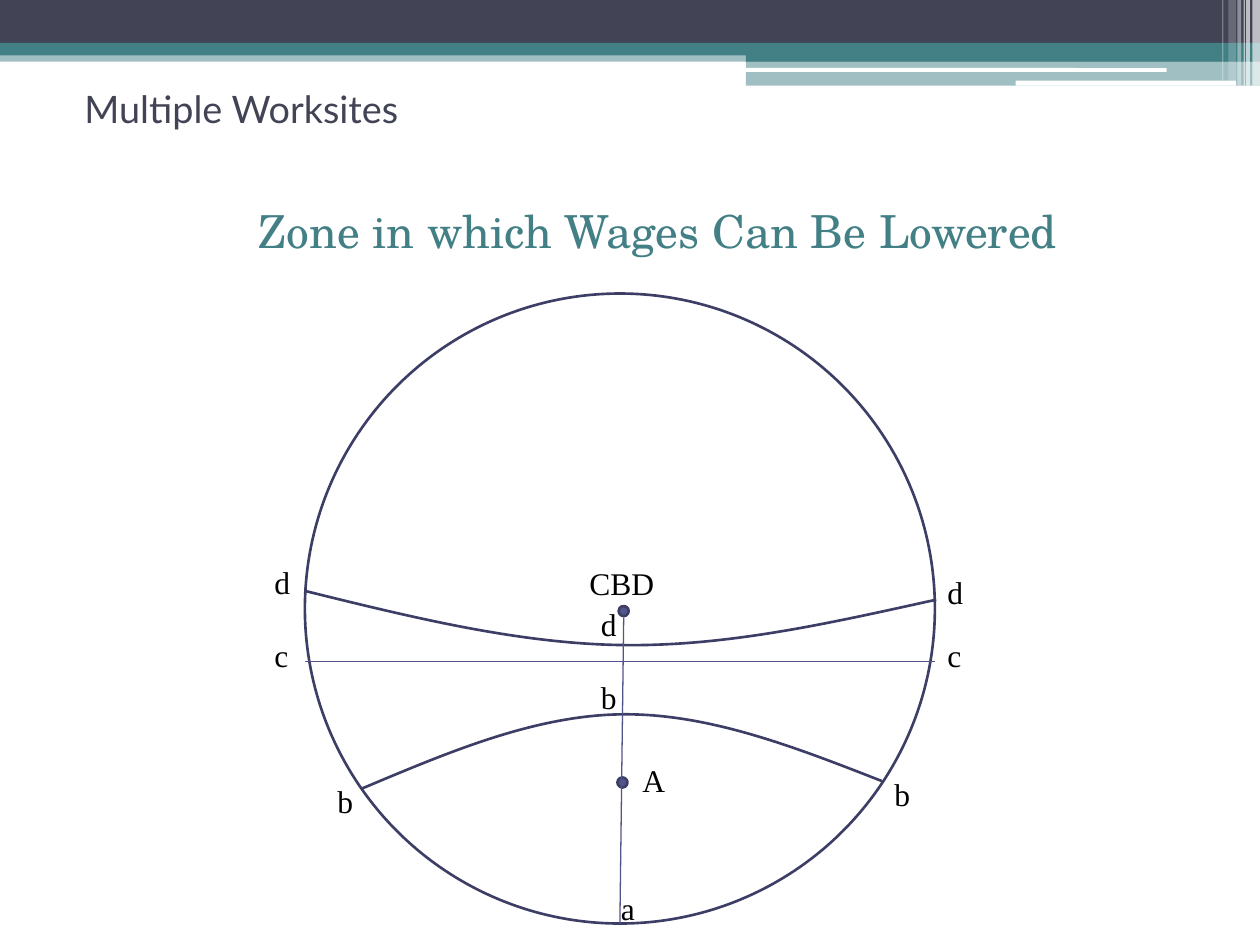
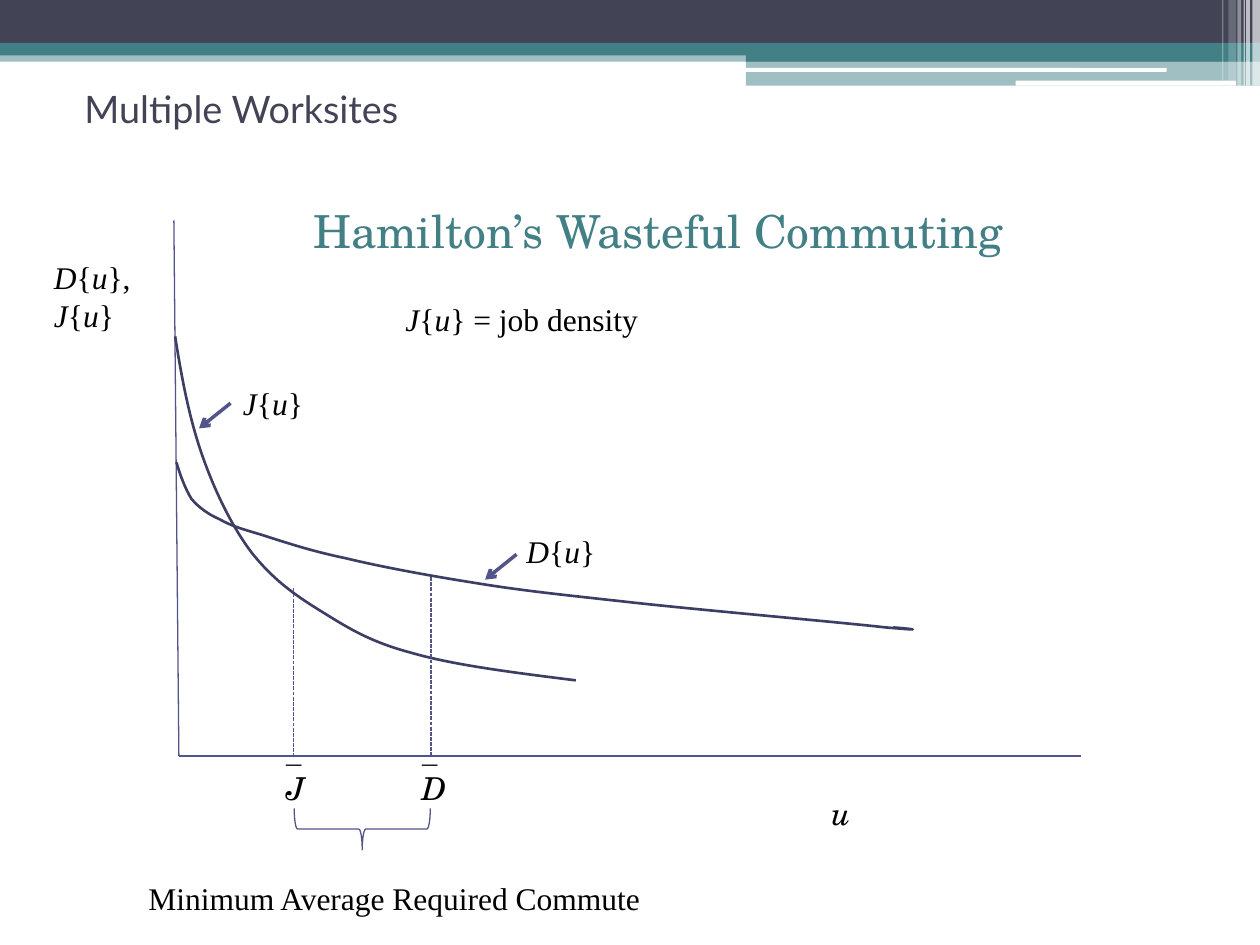
from lxml.etree import SubElement as Sub
from pptx import Presentation
from pptx.dml.color import RGBColor
from pptx.enum.dml import MSO_LINE as Dash
from pptx.enum.shapes import MSO_CONNECTOR as Link, MSO_SHAPE as Kind
from pptx.enum.text import MSO_ANCHOR as Anchor, MSO_AUTO_SIZE as Fit, PP_ALIGN as Align
from pptx.oxml.ns import qn
from pptx.util import Inches, Pt

NAVY, TEAL, WHITE, BLACK = "424456", "438086", "FFFFFF", "000000"
VIOLET, EDGE = "53548A", "3D3E66"
SANS, SCHOOL, TIMES = "Lato", "TeX Gyre Schola", "Times New Roman"


def tint(code):
    return RGBColor.from_string(code)


def span(*sizes):
    return [Inches(size) for size in sizes]


class Deck:
    def __init__(self):
        self.show = Presentation()
        self.show.slide_width, self.show.slide_height = span(10, 7.5)
        self.slide = None

    def page(self, title, head):
        self.slide = self.show.slides.add_slide(self.show.slide_layouts[1])
        name, body = self.slide.placeholders
        self.place(name, (0.5, 0.75, 9, 0.58))
        frame = name.text_frame
        frame.text = title
        frame.auto_size = Fit.NONE
        frame.vertical_anchor = Anchor.MIDDLE
        frame.margin_left, frame.margin_top, frame.margin_bottom = span(0.17, 0, 0.36)
        frame.paragraphs[0].alignment = Align.LEFT
        self.font(frame.paragraphs[0].runs[0], SANS, 21.6, NAVY)

        self.place(body, (0.5, 1.56, 9, 5.86))
        frame = body.text_frame
        frame.text = head
        frame.auto_size = Fit.NONE
        para = frame.paragraphs[0]
        para.level = 1
        para.alignment = Align.CENTER
        para.space_before = Pt(3)
        props = para._p.get_or_add_pPr()
        props.set("marL", str(Inches(0.45)))
        props.set("indent", "0")
        Sub(props, qn("a:buNone"))
        self.font(para.runs[0], SCHOOL, 26, TEAL)

    def place(self, shape, at):
        shape.left, shape.top, shape.width, shape.height = span(*at)

    def font(self, run, face, size, hue):
        run.font.name = face
        run.font.size = Pt(size)
        run.font.color.rgb = tint(hue)

    def stroke(self, line, hue, width):
        line.color.rgb = tint(hue)
        line.width = Pt(width)

    def shape(self, kind, at, fill=None, edge=None, width=1.5, alpha=100):
        shape = self.slide.shapes.add_shape(kind, *span(*at))
        shape.shadow.inherit = False
        if fill:
            shape.fill.solid()
            shape.fill.fore_color.rgb = tint(fill)
            if alpha < 100:
                hue = next(shape.element.spPr.iter(qn("a:srgbClr")))
                Sub(hue, qn("a:alpha"), val=str(alpha * 1000))
        else:
            shape.fill.background()
        if edge:
            self.stroke(shape.line, edge, width)
        else:
            shape.line.fill.background()
        return shape

    def bands(self, rows):
        tree = self.show.slide_master.shapes.element
        for mark, (kind, at, fill, alpha) in enumerate(rows, 20):
            band = self.shape(kind, at, fill, alpha=alpha).element
            band.nvSpPr.cNvPr.set("id", str(mark))
            tree.append(band)

    def line(self, start, end, width=0.75, dash=None, arrow=False):
        line = self.slide.shapes.add_connector(Link.STRAIGHT, *span(*start, *end))
        self.stroke(line.line, VIOLET, width)
        if dash:
            line.line.dash_style = dash
        props = line.element.spPr
        if arrow:
            Sub(props.get_or_add_ln(), qn("a:tailEnd"), type="arrow")
        Sub(props, qn("a:effectLst"))

    def curve(self, start, *points):
        pen = self.slide.shapes.build_freeform(*span(*start))
        pen.add_line_segments([span(*point) for point in points], close=False)
        shape = pen.convert_to_shape()
        steps = list(shape.element.iter(qn("a:lnTo")))
        for one, two, three in zip(steps[::3], steps[1::3], steps[2::3]):
            one.tag = qn("a:cubicBezTo")
            for step in (two, three):
                one.append(step[0])
                step.getparent().remove(step)
        shape.shadow.inherit = False
        shape.fill.background()
        self.stroke(shape.line, EDGE, 1.5)

    def label(self, at, *rows, face=TIMES):
        frame = self.slide.shapes.add_textbox(*span(*at)).text_frame
        frame.word_wrap = True
        frame.auto_size = Fit.SHAPE_TO_FIT_TEXT
        for spot, row in enumerate(rows):
            para = frame.add_paragraph() if spot else frame.paragraphs[0]
            for turn, part in enumerate(row.split("*")):
                if part:
                    run = para.add_run()
                    run.text = part
                    run.font.italic = turn % 2 == 1
                    self.font(run, face, 18, BLACK)


def frame_bands(deck):
    rows = [
        (Kind.RECTANGLE, (0, 0.4, 10, 0.09), TEAL, 50),
        (Kind.RECTANGLE, (0, 0, 10, 0.34), NAVY, 100),
        (Kind.RECTANGLE, (0, 0.34, 10, 0.1), TEAL, 100),
        (Kind.RECTANGLE, (5.92, 0.39, 4.08, 0.1), TEAL, 100),
        (Kind.RECTANGLE, (5.92, 0.48, 4.08, 0.2), TEAL, 50),
        (Kind.ROUNDED_RECTANGLE, (5.91, 0.54, 3.35, 0.03), WHITE, 100),
        (Kind.ROUNDED_RECTANGLE, (8.06, 0.64, 1.75, 0.04), WHITE, 100),
    ]
    stripes = [
        (9.94, 0.06, 0.68, 65), (9.89, 0.03, 0.68, 65), (9.87, 0.01, 0.68, 60),
        (9.82, 0.03, 0.68, 40), (9.75, 0.06, 0.64, 20), (9.7, 0.01, 0.64, 30),
    ]
    rows += [(Kind.RECTANGLE, (left, 0, wide, tall), WHITE, alpha)
             for left, wide, tall, alpha in stripes]
    deck.bands(rows)


def wage_zone(deck):
    deck.shape(Kind.OVAL, (2.42, 2.33, 5, 5), edge=EDGE)
    for left, top in ((4.91, 4.81), (4.9, 6.17)):
        deck.shape(Kind.OVAL, (left, top, 0.08, 0.08), VIOLET, EDGE)
    deck.curve((2.87, 6.26), (3.56, 5.97), (4.24, 5.68), (4.93, 5.67),
               (5.62, 5.66), (6.31, 5.93), (7, 6.2))
    deck.line((2.42, 5.25), (7.42, 5.25))
    deck.curve((2.42, 4.69), (3.27, 4.9), (4.12, 5.11), (4.95, 5.12),
               (5.79, 5.13), (6.61, 4.94), (7.43, 4.76))
    deck.line((4.95, 4.9), (4.92, 7.33))
    deck.label((4.58, 4.43, 1.08, 0.4), "CBD")
    spots = [
        ("A", 5, 5.99), ("a", 4.83, 7.01),
        ("b", 2.58, 6.16), ("b", 4.67, 5.33), ("b", 7, 6.1),
        ("c", 2.08, 5), ("c", 7.42, 5),
        ("d", 2.08, 4.42), ("d", 4.67, 4.75), ("d", 7.42, 4.5),
    ]
    for mark, left, top in spots:
        deck.label((left, top, 0.42, 0.4), mark)


def commute(deck):
    deck.line((1.38, 1.75), (1.42, 6))
    deck.line((1.42, 6), (8.58, 6))
    deck.curve((1.39, 2.67), (1.44, 2.99), (1.5, 3.31), (1.6, 3.6),
               (1.7, 3.89), (1.84, 4.18), (2, 4.39),
               (2.16, 4.59), (2.32, 4.71), (2.53, 4.84),
               (2.74, 4.97), (2.92, 5.09), (3.26, 5.18),
               (3.6, 5.28), (4.09, 5.34), (4.57, 5.4))
    deck.curve((1.4, 3.67), (1.43, 3.77), (1.47, 3.88), (1.52, 3.96),
               (1.58, 4.03), (1.65, 4.08), (1.74, 4.12),
               (1.83, 4.17), (1.89, 4.19), (2.06, 4.24),
               (2.22, 4.29), (2.45, 4.37), (2.74, 4.43),
               (3.03, 4.5), (3.41, 4.57), (3.79, 4.63),
               (4.16, 4.69), (4.46, 4.72), (5, 4.78),
               (5.54, 4.84), (6.68, 4.94), (7.03, 4.98),
               (7.38, 5.01), (7.23, 4.99), (7.09, 4.98))
    for mark, left, drop, top in (("J", 2.17, 2.33, 4.67), ("D", 3.25, 3.42, 4.58)):
        deck.line((drop, top), (drop, 6), dash=Dash.SQUARE_DOT)
        deck.label((left, 5.75, 0.83, 0.71), "*_*", f"*{mark}*", face=SCHOOL)
    deck.label((0.33, 2, 0.83, 0.71), "*D*{*u*},", "*J*{*u*}")
    for mark, left, top, tip in (("J", 1.83, 3, (1.58, 3.4)), ("D", 4.08, 4.17, (3.85, 4.6))):
        deck.label((left, top, 0.83, 0.4), f"*{mark}*{{*u*}}")
        deck.line((tip[0] + 0.25, tip[1] - 0.2), tip, 2, arrow=True)
    deck.label((6.5, 6.25, 0.83, 0.4), "*u*", face=SCHOOL)
    brace = deck.shape(Kind.LEFT_BRACE, (2.71, 6.04, 0.33, 1.08), edge=VIOLET, width=0.75)
    brace.rotation = 270
    deck.label((1.08, 6.93, 4.54, 0.4), "Minimum Average Required Commute")
    deck.label((3.12, 2.33, 4.54, 0.4), "*J*{*u*} = job density")


def main():
    deck = Deck()
    title = "Multiple Worksites"
    deck.page(title, "Zone in which Wages Can Be Lowered")
    frame_bands(deck)
    wage_zone(deck)
    deck.page(title, "Hamilton’s Wasteful Commuting")
    commute(deck)
    deck.show.save("out.pptx")


if __name__ == "__main__":
    main()
